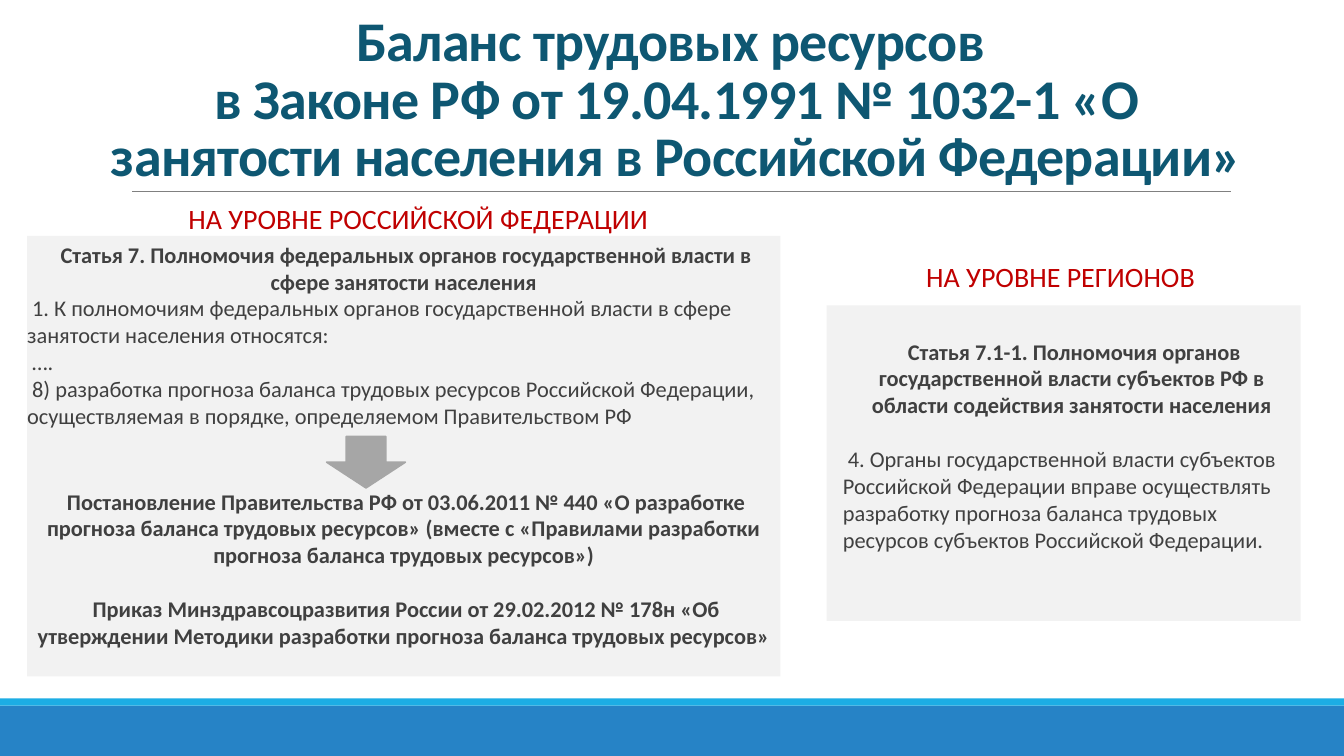
from dataclasses import dataclass, field
from typing import Any, NamedTuple

from lxml.etree import SubElement
from pptx import Presentation
from pptx.dml.color import RGBColor
from pptx.enum.shapes import MSO_CONNECTOR, MSO_SHAPE
from pptx.enum.text import MSO_ANCHOR, PP_ALIGN
from pptx.oxml.ns import qn
from pptx.util import Inches, Pt


@dataclass(frozen=True)
class Theme:
    face: str = "Calibri"
    title: str = "0E5772"
    head: str = "C00000"
    body: str = "404040"
    panel: str = "F2F2F2"
    arrow: str = "A6A6A6"
    rule: str = "808080"
    band: str = "2683C6"
    strip: str = "1CADE4"
    big: float = 40
    mid: float = 20
    small: float = 16


THEME = Theme()


class Box(NamedTuple):
    left: float
    top: float
    width: float
    height: float


class Para(NamedTuple):
    text: str
    bold: bool = False
    before: float = 0


@dataclass(frozen=True)
class Block:
    box: Box
    shape: MSO_SHAPE
    fill: str
    line: bool = False


@dataclass(frozen=True)
class Label:
    box: Box
    text: str
    size: float
    color: str
    frame: dict[str, Any]
    para: dict[str, Any] = field(default_factory=dict)
    bold: bool = False
    track: int = 0


@dataclass(frozen=True)
class Panel:
    box: Box
    paras: tuple[Para, ...]
    top: float = 0.05
    indent: float = 0


BANDS = (
    Block(Box(0, 7, 13.33, 0.5), MSO_SHAPE.RECTANGLE, THEME.band),
    Block(Box(0, 6.93, 13.33, 0.07), MSO_SHAPE.RECTANGLE, THEME.strip),
)
ARROW = Block(Box(3.24, 4.33, 0.78, 0.51), MSO_SHAPE.DOWN_ARROW, THEME.arrow, True)
MIDDLE = {"vertical_anchor": MSO_ANCHOR.MIDDLE}
LABELS = (
    Label(
        Box(0.85, 0.32, 11.72, 1.59),
        "Баланс трудовых ресурсов \vв Законе РФ от 19.04.1991 № 1032-1 «О занятости населения в Российской Федерации»",
        THEME.big, THEME.title, {"vertical_anchor": MSO_ANCHOR.BOTTOM},
        {"line_spacing": 0.85}, True, -50,
    ),
    Label(Box(1.45, 1.78, 5.4, 0.81), "НА УРОВНЕ РОССИЙСКОЙ ФЕДЕРАЦИИ",
          THEME.mid, THEME.head, MIDDLE, {"line_spacing": 0.9}),
    Label(Box(7.82, 2.36, 5.4, 0.81), "НА УРОВНЕ РЕГИОНОВ",
          THEME.mid, THEME.head, MIDDLE, {"line_spacing": 0.9}),
)
PANELS = (
    Panel(Box(0.27, 2.34, 7.47, 4.37), (
        Para("Статья 7. Полномочия федеральных органов государственной власти в сфере занятости населения", True),
        Para("1. К полномочиям федеральных органов государственной власти в сфере занятости населения относятся:"),
        Para("…."),
        Para("8) разработка прогноза баланса трудовых ресурсов Российской Федерации, осуществляемая в порядке, определяемом Правительством РФ"),
        Para("Постановление Правительства РФ от 03.06.2011 № 440 «О разработке прогноза баланса трудовых ресурсов» (вместе с «Правилами разработки прогноза баланса трудовых ресурсов»)", True, 42),
        Para("Приказ Минздравсоцразвития России от 29.02.2012 № 178н «Об утверждении Методики разработки прогноза баланса трудовых ресурсов»", True, 19.5),
    )),
    Panel(Box(8.2, 3.03, 4.7, 3.13), (
        Para("Статья 7.1-1. Полномочия органов государственной власти субъектов РФ в области содействия занятости населения", True),
        Para("4. Органы государственной власти субъектов Российской Федерации вправе осуществлять разработку прогноза баланса трудовых ресурсов субъектов Российской Федерации.", False, 19.5),
    ), 0.32, 0.16),
)


def apply(target: Any, values: dict[str, Any]) -> None:
    for name, value in values.items():
        setattr(target, name, value)


def place(box: Box) -> list[int]:
    return [Inches(side) for side in box]


def style(para: Any, size: float, color: str, bold: bool, track: int = 0) -> None:
    for run in para.runs:
        apply(run.font, {"name": THEME.face, "size": Pt(size), "bold": bold})
        run.font.color.rgb = RGBColor.from_string(color)
        if track:
            run.font._element.set("spc", str(track))


def bullet(para: Any, indent: float) -> None:
    props = para._p.get_or_add_pPr()
    props.set("marL", str(Inches(indent)))
    props.set("indent", "0")
    tint = SubElement(props, qn("a:buClr"))
    SubElement(tint, qn("a:srgbClr"), val=THEME.strip)
    SubElement(props, qn("a:buFont"), typeface=THEME.face)
    SubElement(props, qn("a:buChar"), char=" ")


def draw_block(slide: Any, block: Block) -> Any:
    shape = slide.shapes.add_shape(block.shape, *place(block.box))
    shape.shadow.inherit = False
    shape.fill.solid()
    shape.fill.fore_color.rgb = RGBColor.from_string(block.fill)
    if block.line:
        shape.line.color.rgb = RGBColor.from_string(block.fill)
        shape.line.width = Pt(1.25)
    else:
        shape.line.fill.background()
    return shape


def draw_rule(slide: Any) -> None:
    ends = [Inches(side) for side in (1.31, 1.9, 12.21, 1.9)]
    rule = slide.shapes.add_connector(MSO_CONNECTOR.STRAIGHT, *ends)
    rule.line.color.rgb = RGBColor.from_string(THEME.rule)
    rule.line.width = Pt(0.5)
    SubElement(rule._element.spPr, qn("a:effectLst"))


def draw_label(slide: Any, label: Label) -> None:
    frame = slide.shapes.add_textbox(*place(label.box)).text_frame
    apply(frame, {"word_wrap": True, **label.frame})
    para = frame.paragraphs[0]
    para.text = label.text
    apply(para, {"alignment": PP_ALIGN.CENTER, **label.para})
    style(para, label.size, label.color, label.bold, label.track)


def draw_panel(slide: Any, panel: Panel) -> None:
    frame = draw_block(slide, Block(panel.box, MSO_SHAPE.RECTANGLE, THEME.panel)).text_frame
    apply(frame, {
        "word_wrap": True, "vertical_anchor": MSO_ANCHOR.TOP,
        "margin_left": 0, "margin_right": 0,
        "margin_top": Inches(panel.top), "margin_bottom": Inches(0.05),
    })
    for place_no, item in enumerate(panel.paras):
        para = frame.add_paragraph() if place_no else frame.paragraphs[0]
        para.text = item.text
        apply(para, {
            "alignment": PP_ALIGN.CENTER if item.bold else PP_ALIGN.LEFT,
            "space_before": Pt(item.before),
        })
        bullet(para, panel.indent)
        style(para, THEME.small, THEME.body, item.bold)


def main() -> None:
    deck = Presentation()
    apply(deck, {"slide_width": Inches(13.33), "slide_height": Inches(7.5)})
    slide = deck.slides.add_slide(deck.slide_layouts[6])
    for band in BANDS:
        draw_block(slide, band)
    draw_rule(slide)
    for label in LABELS:
        draw_label(slide, label)
    for panel in PANELS:
        draw_panel(slide, panel)
    draw_block(slide, ARROW)
    deck.save("out.pptx")


if __name__ == "__main__":
    main()
